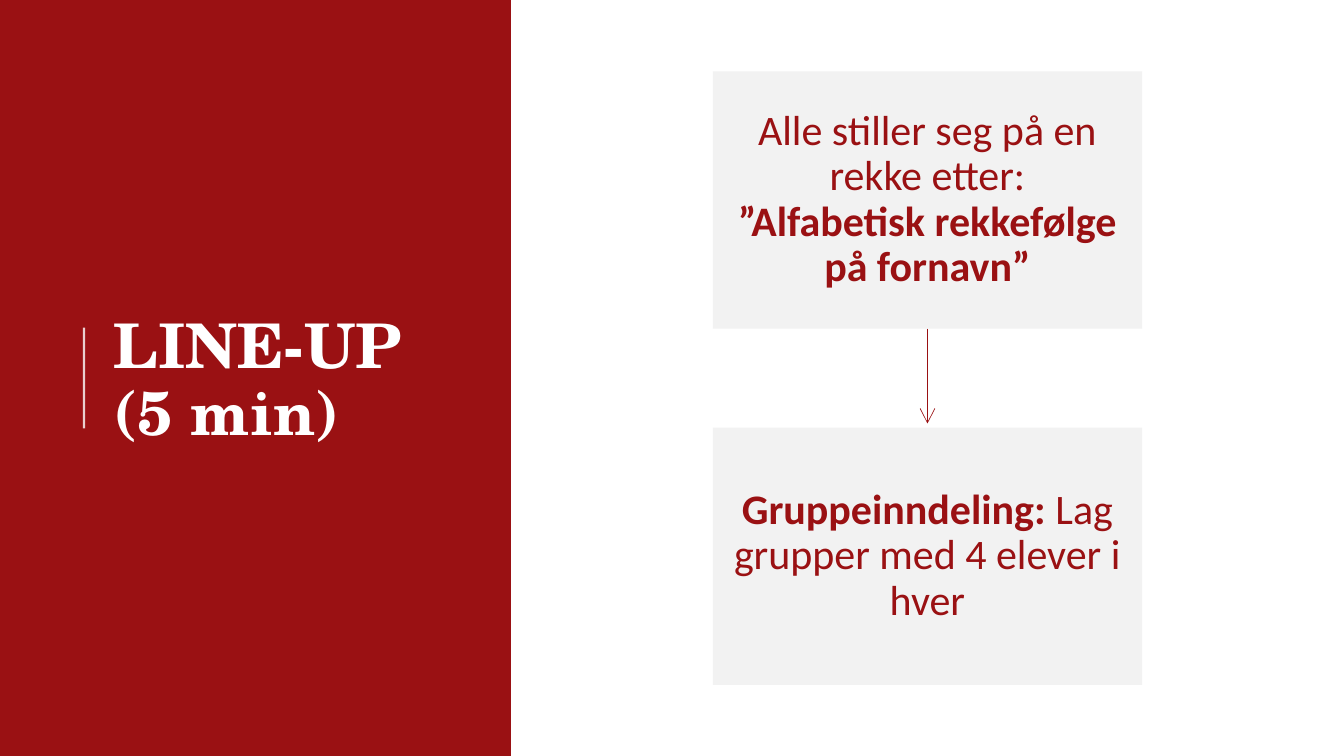
from dataclasses import dataclass

from lxml.etree import SubElement
from pptx import Presentation
from pptx.dml.color import RGBColor
from pptx.enum.shapes import MSO_CONNECTOR, MSO_SHAPE
from pptx.enum.text import MSO_ANCHOR, MSO_AUTO_SIZE, PP_ALIGN
from pptx.oxml.ns import qn
from pptx.shapes.autoshape import Shape
from pptx.shapes.connector import Connector
from pptx.slide import Slide
from pptx.text.text import _Paragraph as Paragraph
from pptx.util import Pt

RED = RGBColor(0x9A, 0x11, 0x13)
LIGHT_GREY = RGBColor(0xF2, 0xF2, 0xF2)
WHITE = RGBColor(0xFF, 0xFF, 0xFF)

SLIDE_WIDTH, SLIDE_HEIGHT = 960, 540
STEP_LEFT, STEP_TOP = 509.2, 51
STEP_WIDTH, STEP_HEIGHT = 306.6, 183.8
STEP_PITCH = 254.5
ARROW_CLEARANCE = 3


@dataclass(frozen=True)
class Phrase:
    text: str
    bold: bool = False


STEPS: list[list[Phrase]] = [
    [Phrase("Alle stiller seg på en rekke etter: "),
     Phrase("”Alfabetisk rekkefølge på fornavn”", bold=True)],
    [Phrase("Gruppeinndeling:", bold=True),
     Phrase(" Lag grupper med 4 elever i hver")],
]


def add_text(paragraph: Paragraph, text: str, *, font: str, size: float,
             color: RGBColor, bold: bool = False) -> None:
    run = paragraph.add_run()
    run.text = text
    run.font.name = font
    run.font.size = Pt(size)
    run.font.color.rgb = color
    run.font.bold = bold


def add_rectangle(slide: Slide, left: float, top: float, width: float,
                  height: float, fill: RGBColor) -> Shape:
    shape = slide.shapes.add_shape(
        MSO_SHAPE.RECTANGLE, Pt(left), Pt(top), Pt(width), Pt(height))
    shape.shadow.inherit = False
    shape.fill.solid()
    shape.fill.fore_color.rgb = fill
    shape.line.fill.background()
    return shape


def add_vertical_line(slide: Slide, x: float, start: float, end: float,
                      color: RGBColor, weight: float) -> Connector:
    line = slide.shapes.add_connector(
        MSO_CONNECTOR.STRAIGHT, Pt(x), Pt(start), Pt(x), Pt(end))
    line.line.color.rgb = color
    line.line.width = Pt(weight)
    SubElement(line.element.spPr, qn("a:effectLst"))
    return line


def add_step(slide: Slide, top: float, phrases: list[Phrase]) -> None:
    box = add_rectangle(slide, STEP_LEFT, top, STEP_WIDTH, STEP_HEIGHT, LIGHT_GREY)
    frame = box.text_frame
    frame.word_wrap = True
    frame.vertical_anchor = MSO_ANCHOR.MIDDLE
    frame.margin_left = frame.margin_right = Pt(15)
    frame.margin_top = frame.margin_bottom = Pt(16)
    paragraph = frame.paragraphs[0]
    paragraph.alignment = PP_ALIGN.CENTER
    paragraph.line_spacing = 0.9
    for phrase in phrases:
        add_text(paragraph, phrase.text, font="Calibri", size=30,
                 color=RED, bold=phrase.bold)


def format_title(slide: Slide, lines: list[str]) -> None:
    title = slide.shapes.title
    title.left, title.top, title.width, title.height = (
        Pt(74.2), Pt(56.2), Pt(265.7), Pt(433.4))
    # Bring the title in front of the panel
    title.element.getparent().append(title.element)
    frame = title.text_frame
    frame.word_wrap = True
    frame.auto_size = MSO_AUTO_SIZE.NONE
    frame.vertical_anchor = MSO_ANCHOR.MIDDLE
    paragraph = frame.paragraphs[0]
    paragraph.alignment = PP_ALIGN.LEFT
    paragraph.line_spacing = 0.9
    for index, text in enumerate(lines):
        if index:
            paragraph.add_line_break()
        add_text(paragraph, text, font="TeX Gyre Schola", size=44,
                 color=WHITE, bold=True)


def main() -> None:
    presentation = Presentation()
    presentation.slide_width = Pt(SLIDE_WIDTH)
    presentation.slide_height = Pt(SLIDE_HEIGHT)
    slide = presentation.slides.add_slide(presentation.slide_layouts[5])

    # Title panel with its accent line
    add_rectangle(slide, 0, 0, 365, SLIDE_HEIGHT, RED)
    accent = add_vertical_line(slide, 60, 306, 234, WHITE, 1.5)
    accent_color = accent.element.spPr.find(".//" + qn("a:srgbClr"))
    SubElement(accent_color, qn("a:alpha"), val="80000")
    format_title(slide, ["LINE-UP", "(5 min)"])

    # Steps, each joined to the one before it by an arrow
    for index, phrases in enumerate(STEPS):
        top = STEP_TOP + index * STEP_PITCH
        if index:
            arrow = add_vertical_line(
                slide, STEP_LEFT + STEP_WIDTH / 2,
                top - STEP_PITCH + STEP_HEIGHT, top - ARROW_CLEARANCE, RED, 0.5)
            SubElement(arrow.line._get_or_add_ln(), qn("a:tailEnd"),
                       type="arrow", w="lg", len="lg")
        add_step(slide, top, phrases)

    presentation.save("out.pptx")


if __name__ == "__main__":
    main()
